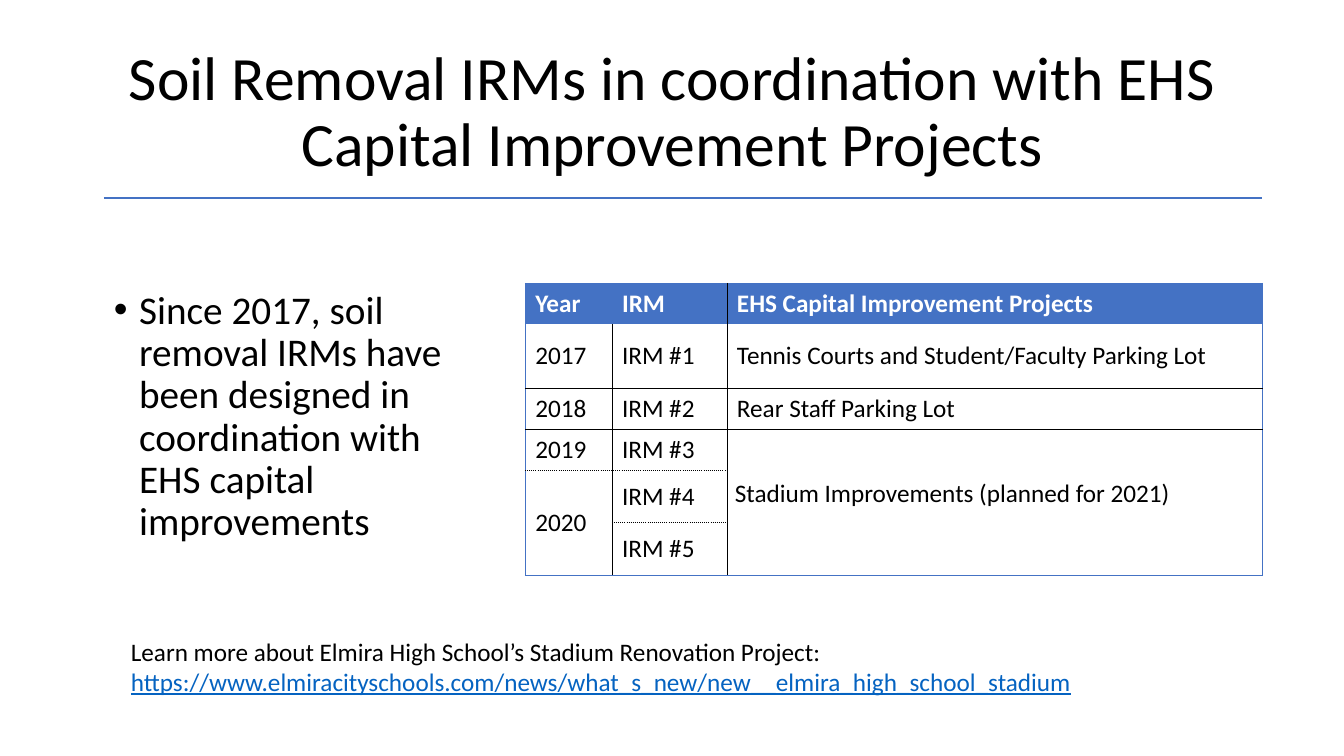
from lxml.etree import SubElement
from pptx import Presentation
from pptx.dml.color import RGBColor
from pptx.enum.shapes import MSO_CONNECTOR
from pptx.enum.text import MSO_ANCHOR, MSO_AUTO_SIZE, PP_ALIGN
from pptx.oxml.ns import qn
from pptx.util import Pt

BLACK = RGBColor(0x00, 0x00, 0x00)
WHITE = RGBColor(0xFF, 0xFF, 0xFF)
BLUE = RGBColor(0x44, 0x72, 0xC4)
LINK_BLUE = RGBColor(0x05, 0x63, 0xC1)

EMU_PER_PX = 9144  # 100 px to the inch
NO_TABLE_STYLE = "{2D5ABB26-0587-4C30-8999-92F81FD0307C}"

# Table rules: colour, width in points, dash
FRAME = (BLUE, 0.5, "solid")
DIVIDER = (BLACK, 0.25, "solid")
YEAR_RULE = (BLACK, 1, "solid")
DOTTED = (BLACK, 1, "sysDot")

COLUMN_WIDTHS = [86, 114, 531]
ROW_HEIGHTS = [37, 64, 37, 37, 52, 52]
HEADER_VERTICALS = [FRAME, None, DIVIDER, FRAME]
BODY_VERTICALS = [FRAME, DIVIDER, DIVIDER, FRAME]
HORIZONTALS = [FRAME, None, YEAR_RULE, YEAR_RULE, DOTTED, DOTTED, FRAME]
MERGES = [((3, 2), (5, 2)), ((4, 0), (5, 0))]
PROJECTS = [
    ["Year", "IRM", "EHS Capital Improvement Projects"],
    ["2017", "IRM #1", "Tennis Courts and Student/Faculty Parking Lot"],
    ["2018", "IRM #2", "Rear Staff Parking Lot"],
    ["2019", "IRM #3", ""],
    ["2020", "IRM #4", ""],
    ["", "IRM #5", ""],
]


def px(length):
    return length * EMU_PER_PX


class SlideBuilder:
    font = "Calibri"

    def __init__(self, slide):
        self.slide = slide

    def add_run(self, paragraph, text, size=18, color=BLACK, bold=False, underline=False):
        run = paragraph.add_run()
        run.text = text
        font = run.font
        font.name, font.size, font.bold = self.font, Pt(size), bold
        font.color.rgb = color
        if underline:
            font.underline = True

    def fill_placeholder(self, index, box, text, size, anchor):
        """Move a template placeholder and return its only paragraph."""
        holder = self.slide.placeholders[index]
        holder.left, holder.top, holder.width, holder.height = map(px, box)
        frame = holder.text_frame
        frame.auto_size = MSO_AUTO_SIZE.NONE
        frame.vertical_anchor = anchor
        paragraph = frame.paragraphs[0]
        paragraph.line_spacing = 0.9
        paragraph.space_before = Pt(0)
        self.add_run(paragraph, text, size)
        return paragraph

    def title(self, box, text):
        heading = self.fill_placeholder(0, box, text, 44, MSO_ANCHOR.MIDDLE)
        heading.alignment = PP_ALIGN.CENTER

    def bullet(self, box, text):
        point = self.fill_placeholder(1, box, text, 28, MSO_ANCHOR.TOP)
        properties = point._p.get_or_add_pPr()
        properties.set("marL", str(px(25)))
        properties.set("indent", str(px(-25)))
        SubElement(properties, qn("a:buFont"), typeface="Arial")
        SubElement(properties, qn("a:buChar"), char="•")

    def text_box(self, box, lines, wrap=True):
        """Each line is its text and a dict of run formatting."""
        frame = self.slide.shapes.add_textbox(*map(px, box)).text_frame
        frame.word_wrap = wrap
        frame.auto_size = MSO_AUTO_SIZE.SHAPE_TO_FIT_TEXT
        for number, (text, style) in enumerate(lines):
            paragraph = frame.add_paragraph() if number else frame.paragraphs[0]
            self.add_run(paragraph, text, **style)

    def rule(self, left, top, right):
        line = self.slide.shapes.add_connector(
            MSO_CONNECTOR.STRAIGHT, px(left), px(top), px(right), px(top))
        line.line.color.rgb = BLUE
        line.line.width = Pt(1.5)
        SubElement(line._element.spPr, qn("a:effectLst"))

    def cell_edge(self, cell, side, edge):
        line = SubElement(cell._tc.get_or_add_tcPr(), qn(f"a:ln{side}"))
        if edge is None:
            SubElement(line, qn("a:noFill"))
            return
        color, width, dash = edge
        line.set("w", str(int(Pt(width))))
        SubElement(SubElement(line, qn("a:solidFill")), qn("a:srgbClr"), val=str(color))
        SubElement(line, qn("a:prstDash"), val=dash)

    def project_table(self, left, top):
        table = self.slide.shapes.add_table(
            len(ROW_HEIGHTS), len(COLUMN_WIDTHS), px(left), px(top),
            px(sum(COLUMN_WIDTHS)), px(sum(ROW_HEIGHTS))).table
        table._tbl.tblPr.find(qn("a:tableStyleId")).text = NO_TABLE_STYLE
        table.horz_banding = False
        for column, width in zip(table.columns, COLUMN_WIDTHS):
            column.width = px(width)
        for row, height in zip(table.rows, ROW_HEIGHTS):
            row.height = px(height)
        for first, last in MERGES:
            table.cell(*first).merge(table.cell(*last))
        for row, texts in enumerate(PROJECTS):
            for column, text in enumerate(texts):
                cell = table.cell(row, column)
                if not cell.is_spanned:
                    self.project_cell(cell, row, column, text)

    def project_cell(self, cell, row, column, text):
        header = row == 0
        verticals = HEADER_VERTICALS if header else BODY_VERTICALS
        self.cell_edge(cell, "L", verticals[column])
        self.cell_edge(cell, "R", verticals[column + 1])
        self.cell_edge(cell, "T", HORIZONTALS[row])
        rows_down = cell.span_height if cell.is_merge_origin else 1
        self.cell_edge(cell, "B", HORIZONTALS[row + rows_down])
        if header:
            cell.fill.solid()
            cell.fill.fore_color.rgb = BLUE
        else:
            cell.fill.background()
            cell.vertical_anchor = MSO_ANCHOR.MIDDLE
        if text:
            self.add_run(cell.text_frame.paragraphs[0], text,
                         color=WHITE if header else BLACK, bold=header)


def main():
    deck = Presentation()
    deck.slide_width, deck.slide_height = px(1333), px(750)
    builder = SlideBuilder(deck.slides.add_slide(deck.slide_layouts[1]))

    builder.title((92, 40, 1150, 145),
                  "Soil Removal IRMs in coordination with EHS Capital Improvement Projects")
    builder.bullet((103, 283, 389, 292),
                   "Since 2017, soil removal IRMs have been designed in coordination "
                   "with EHS capital improvements")
    builder.project_table(521, 281)
    builder.rule(103, 196, 1252)
    builder.text_box((719, 469, 492, 40), [("Stadium Improvements (planned for 2021)", {})])
    builder.text_box((120, 626, 964, 71), [
        ("Learn more about Elmira High School’s Stadium Renovation Project:", {}),
        ("https://www.elmiracityschools.com/news/what_s_new/new__elmira_high_school_stadium",
         {"color": LINK_BLUE, "underline": True}),
    ], wrap=False)

    deck.save("out.pptx")


if __name__ == "__main__":
    main()
